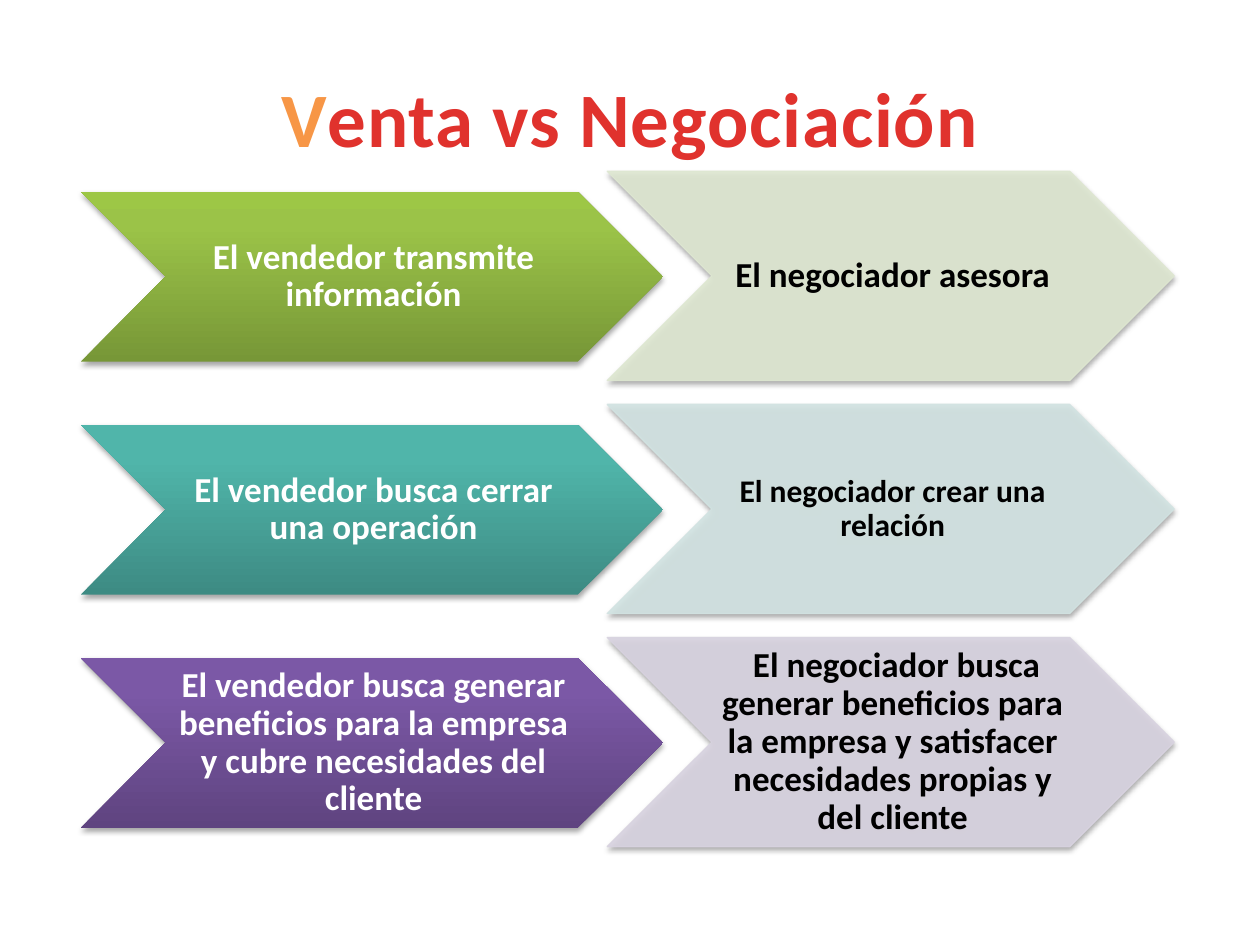
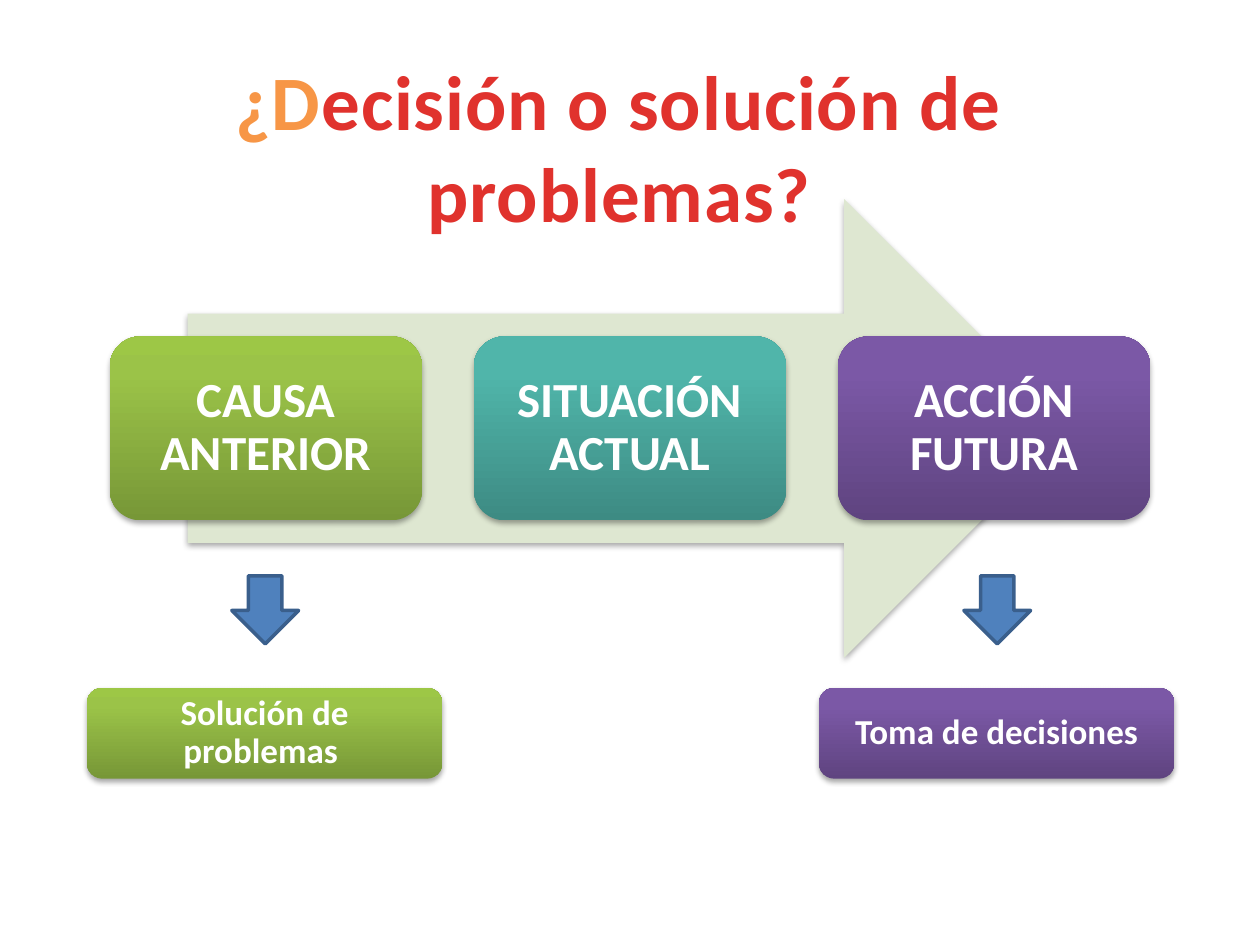
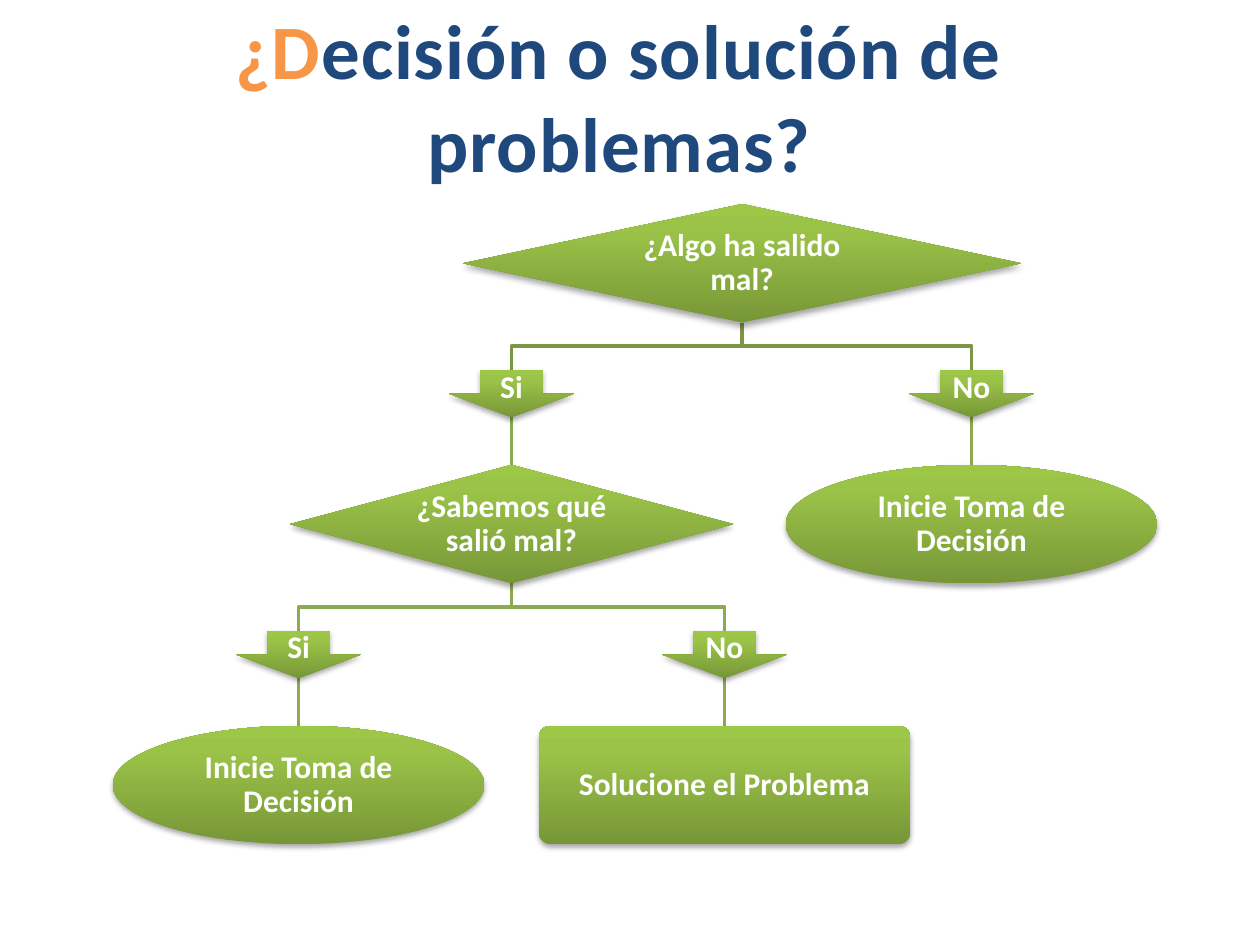
from copy import deepcopy

from lxml.etree import SubElement
from pptx import Presentation
from pptx.dml.color import RGBColor
from pptx.enum.shapes import MSO_CONNECTOR, MSO_SHAPE
from pptx.enum.text import MSO_ANCHOR, PP_ALIGN
from pptx.oxml.ns import qn
from pptx.util import Inches, Pt

# Colours
WHITE = RGBColor(0xFF, 0xFF, 0xFF)
BLACK = RGBColor(0x00, 0x00, 0x00)
ORANGE = RGBColor(0xF7, 0x96, 0x46)
RED = RGBColor(0xE0, 0x32, 0x2D)
NAVY = RGBColor(0x1F, 0x49, 0x7D)
BLUE = RGBColor(0x4F, 0x81, 0xBD)
BLUE_EDGE = RGBColor(0x3A, 0x5F, 0x8C)
PALE_GREEN = RGBColor(0xDE, 0xE7, 0xD1)
PALE_TEAL = RGBColor(0xD2, 0xE3, 0xE2)
PALE_PURPLE = RGBColor(0xD8, 0xD3, 0xE0)
FIRST_BRANCH = RGBColor(0x7C, 0x96, 0x47)
SECOND_BRANCH = RGBColor(0x8D, 0xAA, 0x51)

# Gradients run from bottom (0) to top (1)
GRADIENT_POSITIONS = (0, 0.8, 1)
GREEN = (RGBColor(0x77, 0x97, 0x37), RGBColor(0x9B, 0xC3, 0x48), RGBColor(0x9D, 0xC7, 0x46))
TEAL = (RGBColor(0x3D, 0x8B, 0x83), RGBColor(0x50, 0xB5, 0xAA), RGBColor(0x4E, 0xB8, 0xAC))
PURPLE = (RGBColor(0x5F, 0x44, 0x80), RGBColor(0x7B, 0x58, 0xA6), RGBColor(0x7C, 0x57, 0xA8))

# Text formats
LABEL_FORMAT = {"name": "Calibri", "bold": True}
TITLE_FORMAT = {"name": "Calibri", "bold": True, "size": Pt(44)}
CHEVRON_INSETS = (0.03, 0.01, 0, 0.01)
CARD_INSETS = (0.12,) * 4
NODE_INSETS = (0.07,) * 4

# Flow chart grid
NODE_HEIGHT = 0.94
ROW_PITCH = 2.07
STEP = (ROW_PITCH - NODE_HEIGHT) / 3
ANSWER_WIDTH = 0.99
END_WIDTH = 2.95


def apply_format(font, formats, color):
    for attribute, value in formats.items():
        setattr(font, attribute, value)
    font.color.rgb = color


def set_frame(frame, insets):
    values = dict(zip(("margin_left", "margin_top", "margin_right", "margin_bottom"),
                      map(Inches, insets)))
    values |= {"word_wrap": True, "vertical_anchor": MSO_ANCHOR.MIDDLE}
    for attribute, value in values.items():
        setattr(frame, attribute, value)


def add_title(slide, place, initial, rest, color):
    """Title whose initial letters are orange."""
    frame = slide.shapes.add_textbox(*map(Inches, place)).text_frame
    set_frame(frame, (0.1, 0.05, 0.1, 0.05))
    paragraph = frame.paragraphs[0]
    paragraph.alignment = PP_ALIGN.CENTER
    for text, run_color in ((initial, ORANGE), (rest, color)):
        run = paragraph.add_run()
        run.text = text
        apply_format(run.font, TITLE_FORMAT, run_color)
        run.font._element.set("spc", "50")


def set_gradient(shape, colors):
    shape.fill.gradient()
    shape.fill.gradient_angle = 90
    stop_list = shape._element.spPr.find(".//" + qn("a:gsLst"))
    stop_list.append(deepcopy(stop_list[0]))
    for stop, position, color in zip(shape.fill.gradient_stops, GRADIENT_POSITIONS, colors):
        stop.position = position
        stop.color.rgb = color


def set_shadow(shape):
    shape.shadow.inherit = False
    effects = shape._element.spPr.find(qn("a:effectLst"))
    shadow = SubElement(effects, qn("a:outerShdw"), blurRad="40000", dist="23000",
                        dir="5400000", rotWithShape="0")
    color = SubElement(shadow, qn("a:srgbClr"), val="000000")
    SubElement(color, qn("a:alpha"), val="35000")


def add_block(slide, kind, place, fill):
    """Shadowed shape; fill is one colour or a gradient triple."""
    shape = slide.shapes.add_shape(kind, *map(Inches, place))
    if isinstance(fill, RGBColor):
        shape.fill.solid()
        shape.fill.fore_color.rgb = fill
    else:
        set_gradient(shape, fill)
    shape.line.fill.background()
    set_shadow(shape)
    return shape


def add_label(shape, text, size, insets, color=WHITE):
    set_frame(shape.text_frame, insets)
    paragraph = shape.text_frame.paragraphs[0]
    paragraph.alignment = PP_ALIGN.CENTER
    paragraph.line_spacing = 0.9
    run = paragraph.add_run()
    run.text = text
    apply_format(run.font, LABEL_FORMAT | {"size": Pt(size)}, color)


def make_translucent(shape, color):
    """Outline in the fill colour, both at 90 % opacity."""
    shape.line.color.rgb = color
    shape.line.width = Pt(0.75)
    properties = shape._element.spPr
    for path_to_color in ("a:solidFill", "a:ln/a:solidFill"):
        node = properties
        for tag in path_to_color.split("/"):
            node = node.find(qn(tag))
        SubElement(node.find(qn("a:srgbClr")), qn("a:alpha"), val="90000")


def add_card(slide, place, fill, text, size):
    card = add_block(slide, MSO_SHAPE.ROUNDED_RECTANGLE, place, fill)
    add_label(card, text, size, CARD_INSETS)


def add_small_arrow(slide, left):
    arrow = slide.shapes.add_shape(
        MSO_SHAPE.DOWN_ARROW, *map(Inches, (left, 4.57, 0.53, 0.54)))
    arrow.shadow.inherit = False
    arrow.fill.solid()
    arrow.fill.fore_color.rgb = BLUE
    arrow.line.color.rgb = BLUE_EDGE
    arrow.line.width = Pt(2)


def add_node(slide, kind, center, row, width, text):
    place = (center - width / 2, 1.62 + row * ROW_PITCH, width, NODE_HEIGHT)
    node = add_block(slide, kind, place, GREEN)
    if kind == MSO_SHAPE.ROUNDED_RECTANGLE:
        node.adjustments[0] = 0.1
    add_label(node, text, 18, NODE_INSETS)


def add_branch(slide, start, end, row, answer, color):
    """Bent line from a question, answer arrow, then a line to the next row."""
    top = 1.62 + row * ROW_PITCH + NODE_HEIGHT
    middle, arrow_top, arrow_bottom, bottom = (top + STEP * n for n in (0.5, 1, 2, 3))
    builder = slide.shapes.build_freeform(Inches(start), Inches(top))
    points = [(start, middle), (end, middle), (end, arrow_top)]
    builder.add_line_segments([(Inches(x), Inches(y)) for x, y in points], close=False)
    bend = builder.convert_to_shape()
    bend.fill.background()
    bend.shadow.inherit = False

    stem = slide.shapes.add_connector(
        MSO_CONNECTOR.STRAIGHT, *map(Inches, (end, arrow_bottom, end, bottom)))
    for line, line_color in ((bend.line, color), (stem.line, SECOND_BRANCH)):
        line.color.rgb = line_color
        line.width = Pt(2)
    SubElement(stem._element.spPr, qn("a:effectLst"))

    place = (end - ANSWER_WIDTH / 2, arrow_top, ANSWER_WIDTH, STEP)
    arrow = add_block(slide, MSO_SHAPE.DOWN_ARROW, place, GREEN)
    add_label(arrow, answer, 18, NODE_INSETS)


def build_comparison(slide):
    add_title(slide, (0.5, 0.3, 9, 1.25), "V", "enta vs Negociación", RED)
    rows = [
        (GREEN, "El vendedor transmite información",
         PALE_GREEN, "El negociador asesora", 20),
        (TEAL, "El vendedor busca cerrar una operación",
         PALE_TEAL, "El negociador crear una relación", 18),
        (PURPLE, "El vendedor busca generar beneficios para la empresa y cubre "
                 "necesidades del cliente",
         PALE_PURPLE, " El negociador busca generar beneficios para la empresa y "
                      "satisfacer necesidades propias y del cliente", 20),
    ]
    for index, (gradient, seller, pale, negotiator, size) in enumerate(rows):
        offset = index * 1.85
        left = add_block(slide, MSO_SHAPE.CHEVRON, (0.64, 1.52 + offset, 4.62, 1.35), gradient)
        add_label(left, seller, 20, CHEVRON_INSETS)
        right = add_block(slide, MSO_SHAPE.CHEVRON, (4.82, 1.36 + offset, 4.5, 1.66), pale)
        make_translucent(right, pale)
        add_label(right, negotiator, size, CHEVRON_INSETS, BLACK)


def build_timeline(slide):
    add_title(slide, (0.33, 0.53, 9.17, 1.25), "¿D", "ecisión o solución de problemas?", RED)
    add_block(slide, MSO_SHAPE.RIGHT_ARROW, (1.49, 1.58, 7.03, 3.64), PALE_GREEN)
    stages = [(GREEN, "CAUSA ANTERIOR"), (TEAL, "SITUACIÓN ACTUAL"), (PURPLE, "ACCIÓN FUTURA")]
    for index, (gradient, text) in enumerate(stages):
        add_card(slide, (0.87 + index * 2.89, 2.67, 2.48, 1.46), gradient, text, 28)
    outcomes = [(0.69, GREEN, "Solución de problemas "), (6.5, PURPLE, "Toma de decisiones")]
    for left, gradient, text in outcomes:
        add_card(slide, (left, 5.46, 2.82, 0.72), gradient, text, 20)
        add_small_arrow(slide, left + 1.15)


def build_flow_chart(slide):
    add_title(slide, (0.33, 0.13, 9.17, 1.25), "¿D", "ecisión o solución de problemas?", NAVY)
    branches = [
        (5.89, 4.06, 0, "Si", FIRST_BRANCH),
        (5.89, 7.71, 0, "No", FIRST_BRANCH),
        (4.06, 2.37, 1, "Si", SECOND_BRANCH),
        (4.06, 5.75, 1, "No", SECOND_BRANCH),
    ]
    for branch in branches:
        add_branch(slide, *branch)
    nodes = [
        (MSO_SHAPE.DIAMOND, 5.89, 0, 4.43, "¿Algo ha salido mal?"),
        (MSO_SHAPE.DIAMOND, 4.06, 1, 3.52, "¿Sabemos qué salió mal?"),
        (MSO_SHAPE.OVAL, 7.71, 1, END_WIDTH, "Inicie Toma de Decisión"),
        (MSO_SHAPE.OVAL, 2.37, 2, END_WIDTH, "Inicie Toma de Decisión"),
        (MSO_SHAPE.ROUNDED_RECTANGLE, 5.75, 2, END_WIDTH, "Solucione el Problema"),
    ]
    for node in nodes:
        add_node(slide, *node)


def main():
    presentation = Presentation()
    presentation.slide_width = Inches(10)
    presentation.slide_height = Inches(7.5)
    for build in (build_comparison, build_timeline, build_flow_chart):
        build(presentation.slides.add_slide(presentation.slide_layouts[6]))
    presentation.save("out.pptx")


if __name__ == "__main__":
    main()
